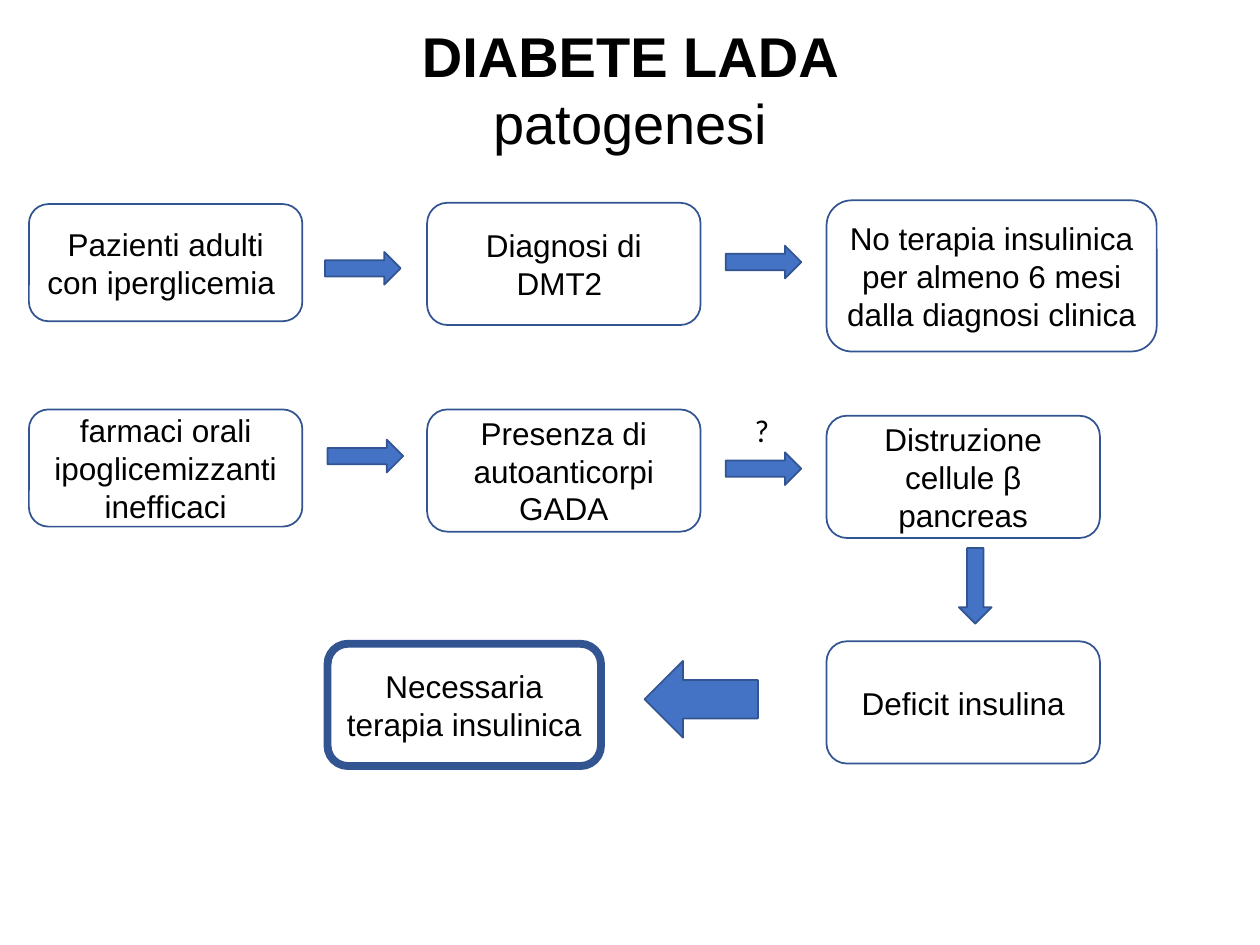
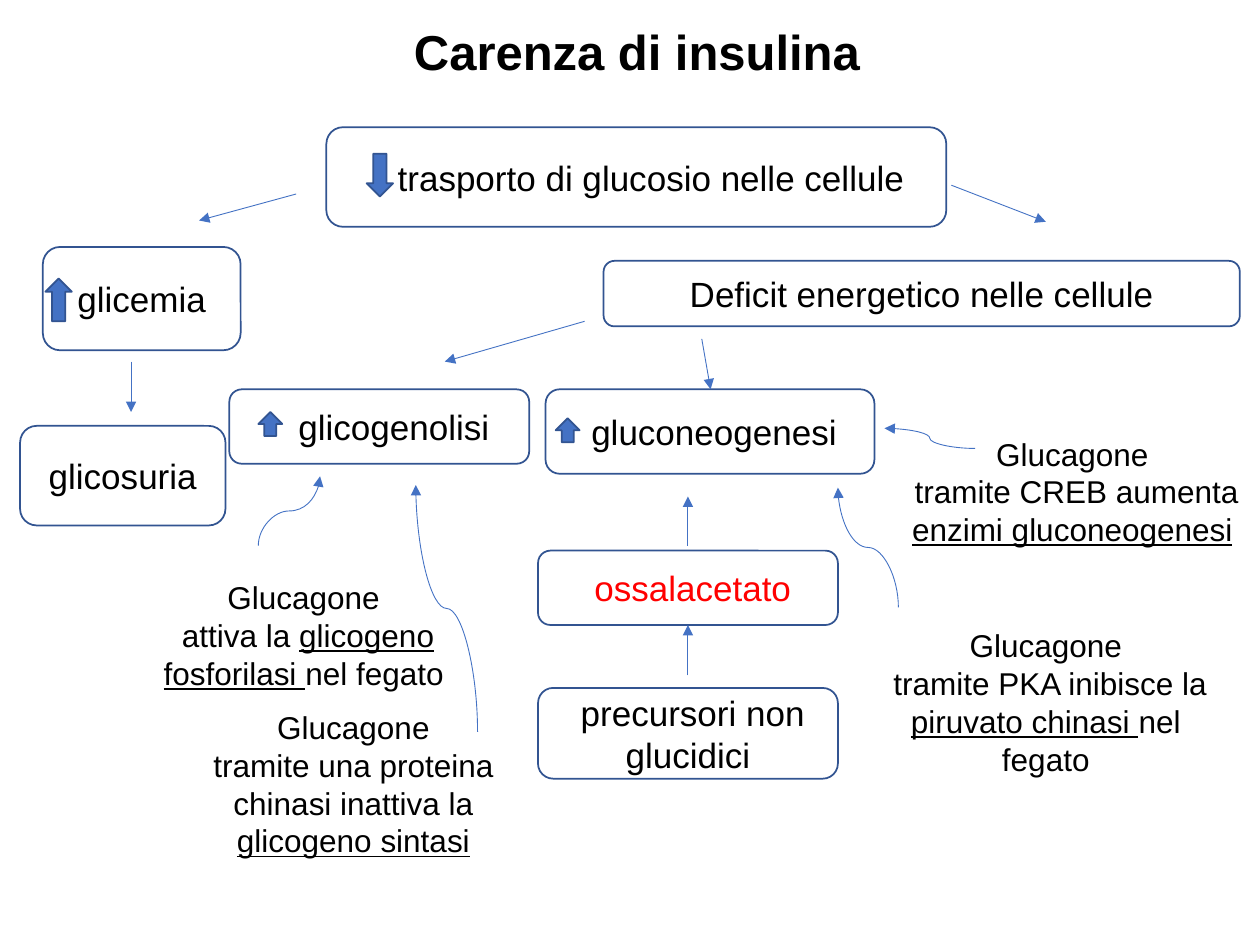
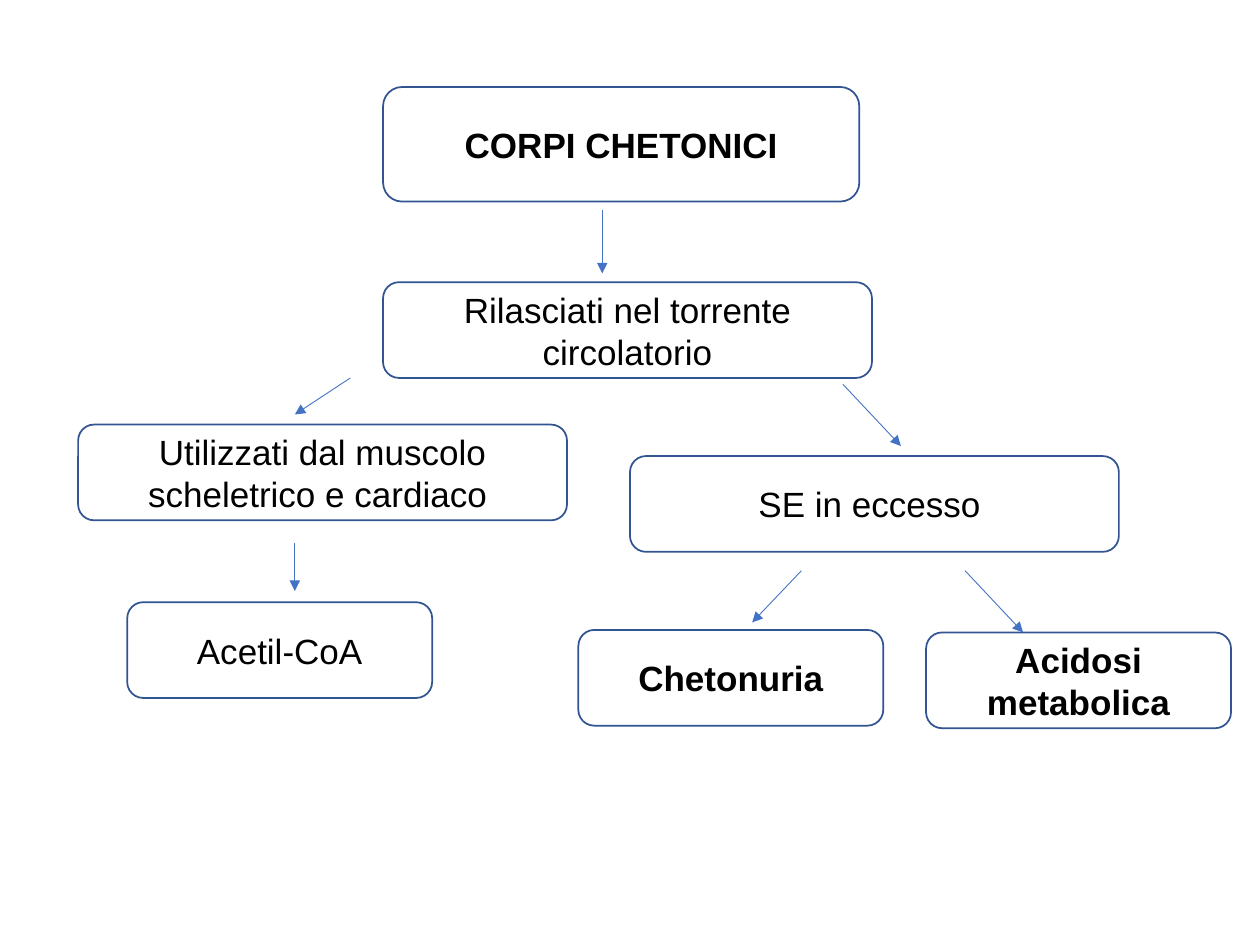
"""Build three flow-chart slides on LADA diabetes, insulin deficiency and ketone bodies."""
from dataclasses import dataclass

from lxml import etree
from pptx import Presentation
from pptx.dml.color import RGBColor
from pptx.enum.shapes import MSO_CONNECTOR, MSO_SHAPE
from pptx.enum.text import MSO_ANCHOR, PP_ALIGN
from pptx.oxml.ns import qn
from pptx.util import Inches, Pt

WIDTH, HEIGHT = Inches(10), Inches(7.5)
COL, ROW = WIDTH / 100, HEIGHT / 75

BLUE = RGBColor(0x44, 0x72, 0xC4)
NAVY = RGBColor(0x32, 0x54, 0x91)
WHITE = RGBColor(0xFF, 0xFF, 0xFF)
BLACK = RGBColor(0x00, 0x00, 0x00)
RED = RGBColor(0xFF, 0x00, 0x00)

ROUNDED = MSO_SHAPE.ROUNDED_RECTANGLE
RIGHT, DOWN = MSO_SHAPE.RIGHT_ARROW, MSO_SHAPE.DOWN_ARROW
STRAIGHT, CURVE = MSO_CONNECTOR.STRAIGHT, MSO_CONNECTOR.CURVE
LEFT, CENTER = PP_ALIGN.LEFT, PP_ALIGN.CENTER
TOP, MIDDLE = MSO_ANCHOR.TOP, MSO_ANCHOR.MIDDLE


@dataclass(frozen=True)
class Run:
    text: str
    bold: bool = False
    underline: bool = False
    color: RGBColor = BLACK


Paragraphs = list[list[Run]]


@dataclass(frozen=True)
class Area:
    x: float
    y: float
    w: float
    h: float

    def emu(self) -> tuple[int, int, int, int]:
        """Return left, top, width and height in EMU."""
        return (round(self.x * COL), round(self.y * ROW),
                round(self.w * COL), round(self.h * ROW))


@dataclass(frozen=True)
class Box:
    text: str
    area: Area
    bold: bool = False
    color: RGBColor = BLACK
    border: float = 1
    indent: float = 0
    align: PP_ALIGN = CENTER


@dataclass(frozen=True)
class Arrow:
    kind: MSO_SHAPE
    area: Area
    rotation: int = 0


@dataclass(frozen=True)
class Link:
    x1: float
    y1: float
    x2: float
    y2: float
    kind: MSO_CONNECTOR = STRAIGHT
    upright: bool = False


def write(tf, paragraphs: Paragraphs, size: int, align=CENTER, anchor=TOP, font="Arial") -> None:
    """Fill a text frame run by run."""
    tf.word_wrap = True
    tf.vertical_anchor = anchor
    for i, runs in enumerate(paragraphs):
        p = tf.add_paragraph() if i else tf.paragraphs[0]
        p.alignment = align
        for run in runs:
            r = p.add_run()
            r.text = run.text
            r.font.name, r.font.size = font, Pt(size)
            r.font.bold, r.font.underline = run.bold, run.underline
            r.font.color.rgb = run.color


def add_text(slide, area: Area, paragraphs: Paragraphs, size: int, **style) -> None:
    """Add a plain text box."""
    write(slide.shapes.add_textbox(*area.emu()).text_frame, paragraphs, size, **style)


def add_outlined(slide, kind: MSO_SHAPE, area: Area, fill: RGBColor, border: float):
    """Add a filled shape with a navy outline."""
    sp = slide.shapes.add_shape(kind, *area.emu())
    sp.shadow.inherit = False
    sp.fill.solid()
    sp.fill.fore_color.rgb = fill
    sp.line.color.rgb = NAVY
    sp.line.width = Pt(border)
    return sp


def add_boxes(slide, boxes: list[Box], size: int) -> None:
    """Add the rounded boxes of a flow chart."""
    for box in boxes:
        tf = add_outlined(slide, ROUNDED, box.area, WHITE, box.border).text_frame
        tf.margin_left = Inches(0.1) + round(box.indent * COL)
        write(tf, [[Run(box.text, box.bold, color=box.color)]], size, box.align, MIDDLE)


def add_arrows(slide, arrows: list[Arrow]) -> None:
    """Add the block arrows."""
    for arrow in arrows:
        add_outlined(slide, arrow.kind, arrow.area, BLUE, 1).rotation = arrow.rotation


def add_links(slide, links: list[Link]) -> None:
    """Add thin connectors with an arrowhead at the end."""
    for link in links:
        x1, x2 = link.x1 * COL, link.x2 * COL
        y1, y2 = link.y1 * ROW, link.y2 * ROW
        if link.upright:
            cx, cy, dx, dy = (x1 + x2) / 2, (y1 + y2) / 2, (x2 - x1) / 2, (y2 - y1) / 2
            x1, y1, x2, y2 = cx + dy, cy - dx, cx - dy, cy + dx
        cn = slide.shapes.add_connector(link.kind, *map(round, (x1, y1, x2, y2)))
        cn.line.color.rgb = BLUE
        cn.line.width = Pt(0.5)
        etree.SubElement(cn.line._get_or_add_ln(), qn("a:tailEnd"), type="triangle")
        sp_pr = cn._element.spPr
        etree.SubElement(sp_pr, qn("a:effectLst"))
        if link.upright:
            sp_pr.find(qn("a:xfrm")).set("rot", str(270 * 60000))


def build_lada(slide) -> None:
    """Draw the pathogenesis of LADA diabetes."""
    first, second, third = 2.3, 33.9, 65.6
    w, h, low = 21.7, 9.7, 9.3
    add_text(slide, Area(21.7, 1.2, 56.7, 11.8),
             [[Run("DIABETE LADA", bold=True)], [Run("patogenesi")]], 32)
    add_boxes(slide, [
        Box("Pazienti adulti con iperglicemia ", Area(first, 16.2, w, low)),
        Box("Diagnosi di DMT2 ", Area(second, 16.1, w, h)),
        Box("No terapia insulinica per almeno 6 mesi dalla diagnosi clinica",
            Area(third, 15.9, 26.2, 12)),
        Box("farmaci orali ipoglicemizzanti inefficaci", Area(first, 32.5, w, low)),
        Box("Presenza di autoanticorpi GADA", Area(second, 32.5, w, h)),
        Box("Distruzione cellule β pancreas", Area(third, 33, w, h)),
        Box("Deficit insulina", Area(third, 50.9, w, h)),
        Box("Necessaria terapia insulinica", Area(26, 51.1, w, h), border=4.5),
    ], 18)
    steps = [(57.6, 19.5, 0), (25.8, 20, 0), (26, 34.9, 0), (57.6, 35.9, 0), (74.4, 45.2, 90)]
    add_arrows(slide, [Arrow(RIGHT, Area(x, y, 6, 2.6), turn) for x, y, turn in steps])
    add_arrows(slide, [Arrow(DOWN, Area(52.6, 51, 6.1, 9), 90)])
    add_text(slide, Area(58.9, 32.1, 2.5, 4), [[Run("?")]], 18, align=LEFT, font="Calibri")


def build_deficiency(slide) -> None:
    """Draw the effects of insulin deficiency."""
    add_text(slide, Area(18.1, 1.2, 64.9, 10.4), [[Run("Carenza di insulina", bold=True)]], 28)
    add_boxes(slide, [
        Box("trasporto di glucosio nelle cellule ", Area(25.9, 10.1, 49.2, 7.9), indent=3.1),
        Box("glicemia", Area(3.4, 19.6, 15.7, 8.2)),
        Box("glicosuria", Area(1.6, 33.8, 16.3, 7.9)),
        Box("Deficit energetico nelle cellule", Area(47.9, 20.7, 50.5, 5.2)),
        Box("gluconeogenesi", Area(43.3, 30.9, 26.1, 6.7), indent=2.3, align=LEFT),
        Box("glicogenolisi", Area(18.2, 30.9, 23.8, 5.9), indent=2.3),
        Box(" precursori non glucidici", Area(42.7, 54.6, 23.8, 7.2)),
        Box(" ossalacetato", Area(42.7, 43.7, 23.8, 5.9), color=RED),
    ], 20)
    add_arrows(slide, [
        Arrow(DOWN, Area(29.1, 12.2, 2.1, 3.4)),
        Arrow(DOWN, Area(3.6, 22.1, 2.1, 3.4), 180),
        Arrow(DOWN, Area(44.1, 33.2, 1.9, 1.9), 180),
        Arrow(DOWN, Area(20.5, 32.7, 1.9, 1.9), 180),
    ])
    notes = [
        (Area(67.9, 34, 34.4, 10.1),
         [Run(" tramite CREB aumenta "), Run("enzimi gluconeogenesi", underline=True)]),
        (Area(14.2, 55.7, 27.7, 13.1),
         [Run("tramite una proteina chinasi inattiva la "),
          Run("glicogeno sintasi", underline=True)]),
        (Area(9.1, 45.4, 30, 10.1),
         [Run(" attiva la "), Run("glicogeno fosforilasi ", underline=True), Run("nel fegato")]),
        (Area(68, 49.2, 30, 13.1),
         [Run(" tramite PKA inibisce la "), Run("piruvato chinasi ", underline=True),
          Run("nel fegato")]),
    ]
    for area, action in notes:
        add_text(slide, area, [[Run("Glucagone")], action], 18)
    add_links(slide, [
        Link(23.5, 15.4, 15.8, 17.5),
        Link(10.4, 28.7, 10.4, 32.7),
        Link(54.6, 43.3, 54.6, 39.4),
        Link(54.6, 53.6, 54.6, 49.6),
        Link(75.5, 14.7, 83, 17.6),
        Link(46.4, 25.5, 35.3, 28.7),
        Link(55.7, 26.9, 56.4, 30.9),
        Link(20.5, 43.3, 25.4, 37.8, CURVE, True),
        Link(37.9, 58.1, 33, 38.5, CURVE, True),
        Link(77.4, 35.6, 70.2, 34, CURVE),
        Link(71.3, 48.2, 66.5, 38.7, CURVE, True),
    ])


def build_ketones(slide) -> None:
    """Draw the fate of ketone bodies."""
    wide, narrow, h = 38.8, 24.2, 7.6
    add_boxes(slide, [
        Box("CORPI CHETONICI", Area(30.4, 6.9, 37.8, 9.1), bold=True),
        Box("Rilasciati nel torrente circolatorio", Area(30.4, 22.4, wide, h)),
        Box("Utilizzati dal muscolo scheletrico e cardiaco ", Area(6.2, 33.7, wide, h)),
        Box("SE in eccesso ", Area(50, 36.2, wide, h)),
        Box("Acetil-CoA", Area(10.1, 47.8, narrow, h)),
        Box("Chetonuria", Area(45.9, 50, narrow, h), bold=True),
        Box("Acidosi metabolica", Area(73.5, 50.2, narrow, h), bold=True),
    ], 20)
    add_links(slide, [
        Link(47.8, 16.7, 47.8, 21.7),
        Link(27.8, 30, 23.4, 32.9),
        Link(23.4, 43.1, 23.4, 46.9),
        Link(66.9, 30.5, 71.5, 35.4),
        Link(76.6, 45.3, 81.2, 50.2),
        Link(63.6, 45.3, 59.7, 49.4),
    ])


def main() -> None:
    """Build and save the presentation."""
    prs = Presentation()
    prs.slide_width, prs.slide_height = WIDTH, HEIGHT
    for build in (build_lada, build_deficiency, build_ketones):
        build(prs.slides.add_slide(prs.slide_layouts[6]))
    prs.save("out.pptx")


if __name__ == "__main__":
    main()
